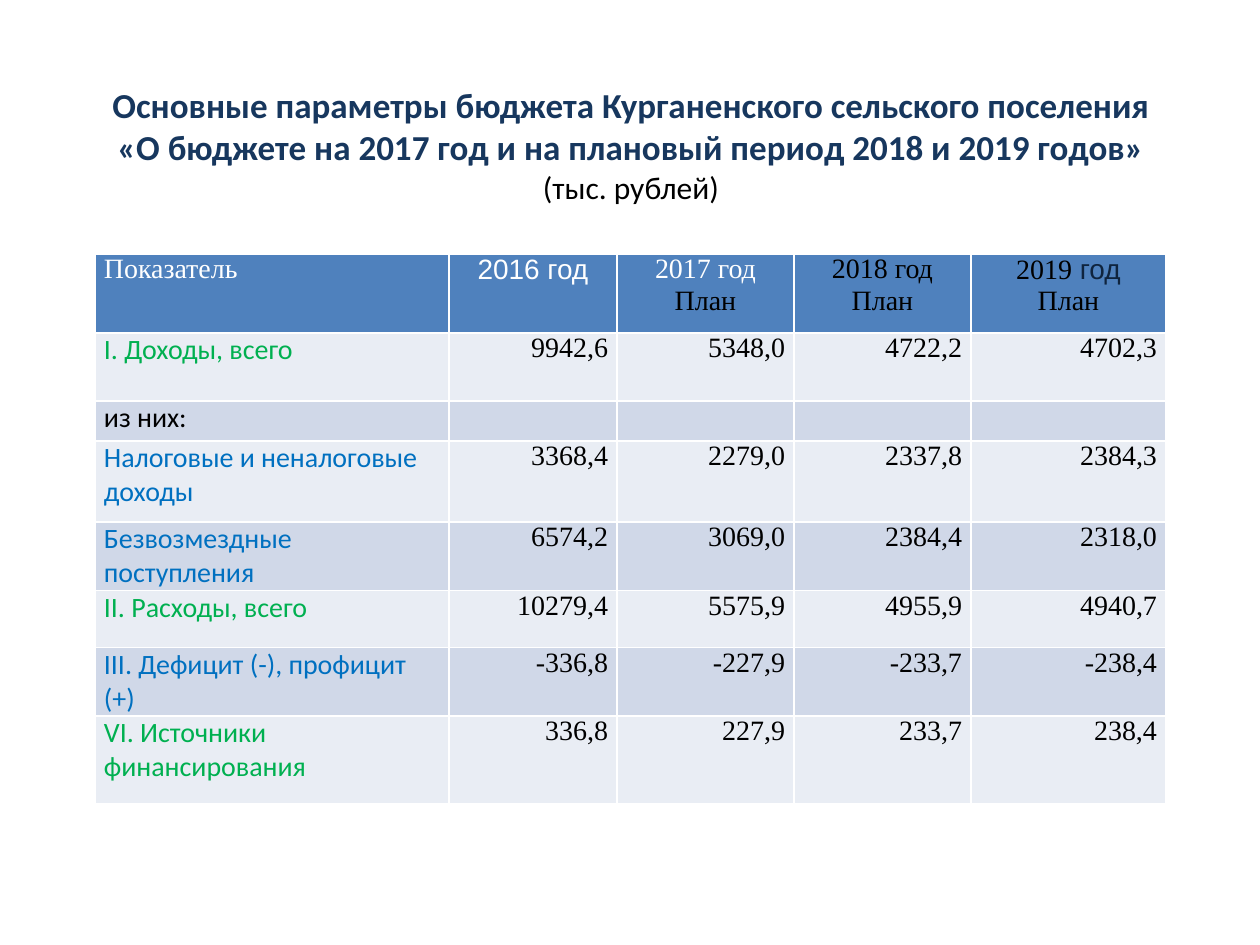
from lxml.etree import SubElement
from pptx import Presentation
from pptx.dml.color import RGBColor
from pptx.enum.text import MSO_ANCHOR as Anchor, MSO_AUTO_SIZE as AutoSize, PP_ALIGN as Align
from pptx.oxml.ns import qn
from pptx.util import Emu, Pt

PX = 914400 // 126
COLORS = {
    "navy": "17375E",
    "ink": "0F243E",
    "black": "000000",
    "white": "FFFFFF",
    "green": "00B050",
    "blue": "0070C0",
    "header": "4F81BD",
    "light": "E9EDF4",
    "dark": "D0D8E8",
}
SANS, SERIF, ARIAL = "Calibri", "Times New Roman", "Arial"
COLUMN_WIDTHS = [354, 168, 177, 177, 195]
ROW_HEIGHTS = [79, 68, 40, 81, 59, 57, 67, 88]
PLAN = [("План", SERIF, "black")]
HEADERS = [
    [[("Показатель", SERIF, "white")]],
    [[("2016 год", ARIAL, "white")]],
    [[("2017 год", SERIF, "white")], PLAN],
    [[("2018 год", SERIF, "black")], PLAN],
    [[("2019", SERIF, "black"), (" год", ARIAL, "ink")], PLAN],
]
BUDGET = [
    ("I. Доходы, всего", "green", ["9942,6", "5348,0", "4722,2", "4702,3"]),
    ("из них:", "black", [""] * 4),
    ("Налоговые и неналоговые доходы", "blue", ["3368,4", "2279,0", "2337,8", "2384,3"]),
    ("Безвозмездные поступления", "blue", ["6574,2", "3069,0", "2384,4", "2318,0"]),
    ("II. Расходы, всего", "green", ["10279,4", "5575,9", "4955,9", "4940,7"]),
    ("III. Дефицит (-), профицит (+)", "blue", ["-336,8", "-227,9", "-233,7", "-238,4"]),
    ("VI. Источники финансирования", "green", ["336,8", "227,9", "233,7", "238,4"]),
]


def px(length):
    return Emu(length * PX)


def rgb(name):
    return RGBColor.from_string(COLORS[name])


def add_span(para, text, font, color, size=16, bold=False):
    span = para.add_run()
    span.text = text
    span.font.name = font
    span.font.size = Pt(size)
    span.font.bold = bold
    span.font.color.rgb = rgb(color)


def add_title(page):
    title = page.shapes.title
    title.left, title.top, title.width, title.height = px(64), px(55), px(1134), px(179)
    frame = title.text_frame
    frame.word_wrap = True
    frame.auto_size = AutoSize.NONE
    frame.vertical_anchor = Anchor.MIDDLE
    para = frame.paragraphs[0]
    para.alignment = Align.CENTER
    for line in (
        "Основные параметры бюджета Курганенского сельского поселения",
        "«О бюджете на 2017 год и на плановый период 2018 и 2019 годов»",
    ):
        add_span(para, line, SANS, "navy", 20, True)
        para.add_line_break()
    add_span(para, "(тыс. рублей)", SANS, "black", 18)


def add_borders(cell):
    properties = cell._tc.get_or_add_tcPr()
    for index, side in enumerate(("lnL", "lnR", "lnT", "lnB")):
        line = properties.makeelement(qn(f"a:{side}"), {"w": str(Pt(1))})
        fill = SubElement(line, qn("a:solidFill"))
        SubElement(fill, qn("a:srgbClr"), val=COLORS["white"])
        properties.insert(index, line)


def fill_cell(cell, paragraphs, align, fill):
    cell.margin_left = cell.margin_right = px(9)
    cell.margin_top = cell.margin_bottom = 0
    cell.fill.solid()
    cell.fill.fore_color.rgb = rgb(fill)
    add_borders(cell)
    frame = cell.text_frame
    for index, spans in enumerate(paragraphs):
        para = frame.add_paragraph() if index else frame.paragraphs[0]
        para.alignment = align
        for text, font, color in spans:
            if text:
                add_span(para, text, font, color)


def add_budget_table(page):
    frame = page.shapes.add_table(
        len(ROW_HEIGHTS), len(COLUMN_WIDTHS),
        px(95), px(254), px(sum(COLUMN_WIDTHS)), px(sum(ROW_HEIGHTS)),
    )
    table = frame.table
    table.first_row = table.horz_banding = False
    for column, width in zip(table.columns, COLUMN_WIDTHS):
        column.width = px(width)
    for row, height in zip(table.rows, ROW_HEIGHTS):
        row.height = px(height)
    for column, paragraphs in enumerate(HEADERS):
        align = Align.CENTER if column else Align.LEFT
        fill_cell(table.cell(0, column), paragraphs, align, "header")
    for row, (label, color, values) in enumerate(BUDGET, 1):
        fill = "light" if row % 2 else "dark"
        fill_cell(table.cell(row, 0), [[(label, SANS, color)]], Align.LEFT, fill)
        for column, value in enumerate(values, 1):
            fill_cell(table.cell(row, column), [[(value, SERIF, "black")]], Align.RIGHT, fill)


def main():
    deck = Presentation()
    deck.slide_width, deck.slide_height = px(1260), px(945)
    page = deck.slides.add_slide(deck.slide_layouts[5])
    add_title(page)
    add_budget_table(page)
    deck.save("out.pptx")


if __name__ == "__main__":
    main()
